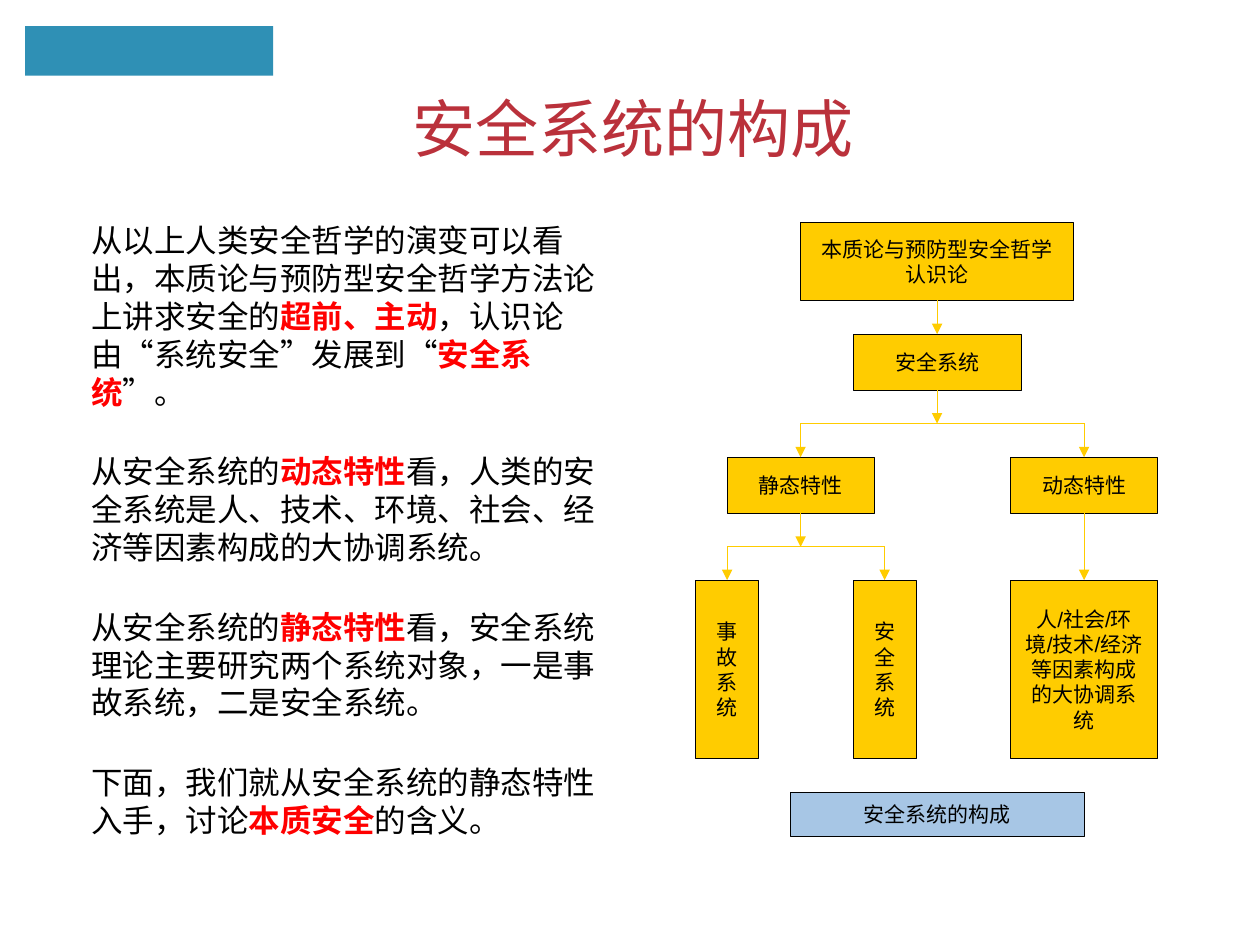
import pptx
import pptx.dml.color
import pptx.enum.shapes
import pptx.enum.text
import pptx.oxml
import pptx.oxml.ns
import pptx.util

Pt = pptx.util.Pt
RECTANGLE = pptx.enum.shapes.MSO_SHAPE.RECTANGLE
STRAIGHT = pptx.enum.shapes.MSO_CONNECTOR.STRAIGHT
MIDDLE = pptx.enum.text.MSO_ANCHOR.MIDDLE
CENTER = pptx.enum.text.PP_ALIGN.CENTER
HEITI = "Noto Sans CJK SC"


def color(value):
    return pptx.dml.color.RGBColor.from_string(value)


def style(run, size, font, ink, bold=False):
    run.font.size = Pt(size)
    run.font.name = font
    run.font.bold = bold
    run.font.color.rgb = color(ink)
    east_asian = pptx.oxml.parse_xml(
        f'<a:ea {pptx.oxml.ns.nsdecls("a")} typeface="{HEITI}"/>')
    run.font._element.find(pptx.oxml.ns.qn("a:latin")).addnext(east_asian)


deck = pptx.Presentation()
deck.slide_width, deck.slide_height = Pt(720), Pt(540)
slide = deck.slides.add_slide(deck.slide_layouts[6])

banner = slide.shapes.add_shape(RECTANGLE, Pt(14.4), Pt(15), Pt(141.8), Pt(28.2))
banner.shadow.inherit = False
banner.fill.solid()
banner.fill.fore_color.rgb = color("2F90B5")
banner.line.fill.background()

title = slide.shapes.add_textbox(Pt(37.5), Pt(51.6), Pt(648), Pt(42.5))
title.text_frame.word_wrap = True
title.text_frame.vertical_anchor = MIDDLE
title.text_frame.text = "安全系统的构成"
title.text_frame.paragraphs[0].alignment = CENTER
style(title.text_frame.paragraphs[0].runs[0], 36, HEITI, "BA313B")

statements = [
    ["从以上人类安全哲学的演变可以看出，本质论与预防型安全哲学方法论上讲求安全的",
     "超前、主动", "，认识论由“系统安全”发展到“", "安全系统", "”。"],
    ["从安全系统的", "动态特性",
     "看，人类的安全系统是人、技术、环境、社会、经济等因素构成的大协调系统。"],
    ["从安全系统的", "静态特性",
     "看，安全系统理论主要研究两个系统对象，一是事故系统，二是安全系统。"],
    ["下面，我们就从安全系统的静态特性入手，讨论", "本质安全", "的含义。"],
]
body = slide.shapes.add_textbox(Pt(45), Pt(123), Pt(318), Pt(342))
body.text_frame.word_wrap = True
for number, pieces in enumerate(statements):
    if number == 0:
        paragraph = body.text_frame.paragraphs[0]
    else:
        paragraph = body.text_frame.add_paragraph()
        paragraph.space_before = Pt(24)
    paragraph._p.get_or_add_pPr().set("hangingPunct", "0")
    for position, piece in enumerate(pieces):
        run = paragraph.add_run()
        run.text = piece
        emphasis = position % 2 == 1
        style(run, 18, HEITI, "FF0000" if emphasis else "000000", emphasis)

root_x, static_x, dynamic_x = 535.5, 457.5, 619.5
accident_x, safety_x = 415.5, 505.5
upper_bus, lower_bus = 242, 312.5
boxes = [
    ("philosophy", "本质论与预防型安全哲学认识论", root_x, 127.2, 156, 44.5, "FFCC00"),
    ("system", "安全系统", root_x, 190.9, 96, 32, "FFCC00"),
    ("static", "静态特性", static_x, 261.3, 84, 32, "FFCC00"),
    ("dynamic", "动态特性", dynamic_x, 261.3, 84, 32, "FFCC00"),
    ("accident", "事故系统", accident_x, 331.5, 36, 102, "FFCC00"),
    ("safety", "安全系统", safety_x, 331.5, 36, 102, "FFCC00"),
    ("factors", "人/社会/环境/技术/经济等因素构成的大协调系统",
     dynamic_x, 331.5, 84, 102, "FFCC00"),
    ("caption", "安全系统的构成", root_x, 453, 168, 25, "A7C6E5"),
]
nodes = {}
for key, label, center_x, top, width, height, fill in boxes:
    node = slide.shapes.add_shape(
        RECTANGLE, Pt(center_x - width / 2), Pt(top), Pt(width), Pt(height))
    node.shadow.inherit = False
    node.fill.solid()
    node.fill.fore_color.rgb = color(fill)
    node.line.color.rgb = color("000000")
    node.line.width = Pt(0.5)
    node.text_frame.word_wrap = key != "caption"
    node.text_frame.vertical_anchor = MIDDLE
    node.text_frame.text = label
    node.text_frame.paragraphs[0].alignment = CENTER
    style(node.text_frame.paragraphs[0].runs[0], 12, "Arial", "000000")
    nodes[key] = node

links = [
    ("philosophy", "system", True),
    ("system", (root_x, upper_bus), True),
    ((static_x, upper_bus), (dynamic_x, upper_bus), False),
    ((static_x, upper_bus), "static", True),
    ((dynamic_x, upper_bus), "dynamic", True),
    ("static", (static_x, lower_bus), True),
    ((accident_x, lower_bus), (safety_x, lower_bus), False),
    ((accident_x, lower_bus), "accident", True),
    ((safety_x, lower_bus), "safety", True),
    ("dynamic", "factors", True),
]
for start, end, arrow in links:
    start_x, start_y = (0, 0) if start in nodes else start
    end_x, end_y = (0, 0) if end in nodes else end
    link = slide.shapes.add_connector(
        STRAIGHT, Pt(start_x), Pt(start_y), Pt(end_x), Pt(end_y))
    if start in nodes:
        link.begin_connect(nodes[start], 2)
    if end in nodes:
        link.end_connect(nodes[end], 0)
    link.line.color.rgb = color("FFCC00")
    link.line.width = Pt(0.5)
    if arrow:
        link.line._get_or_add_ln().append(pptx.oxml.parse_xml(
            f'<a:tailEnd {pptx.oxml.ns.nsdecls("a")} type="triangle"/>'))
    link._element.spPr.append(pptx.oxml.parse_xml(
        f'<a:effectLst {pptx.oxml.ns.nsdecls("a")}/>'))

deck.save("out.pptx")
